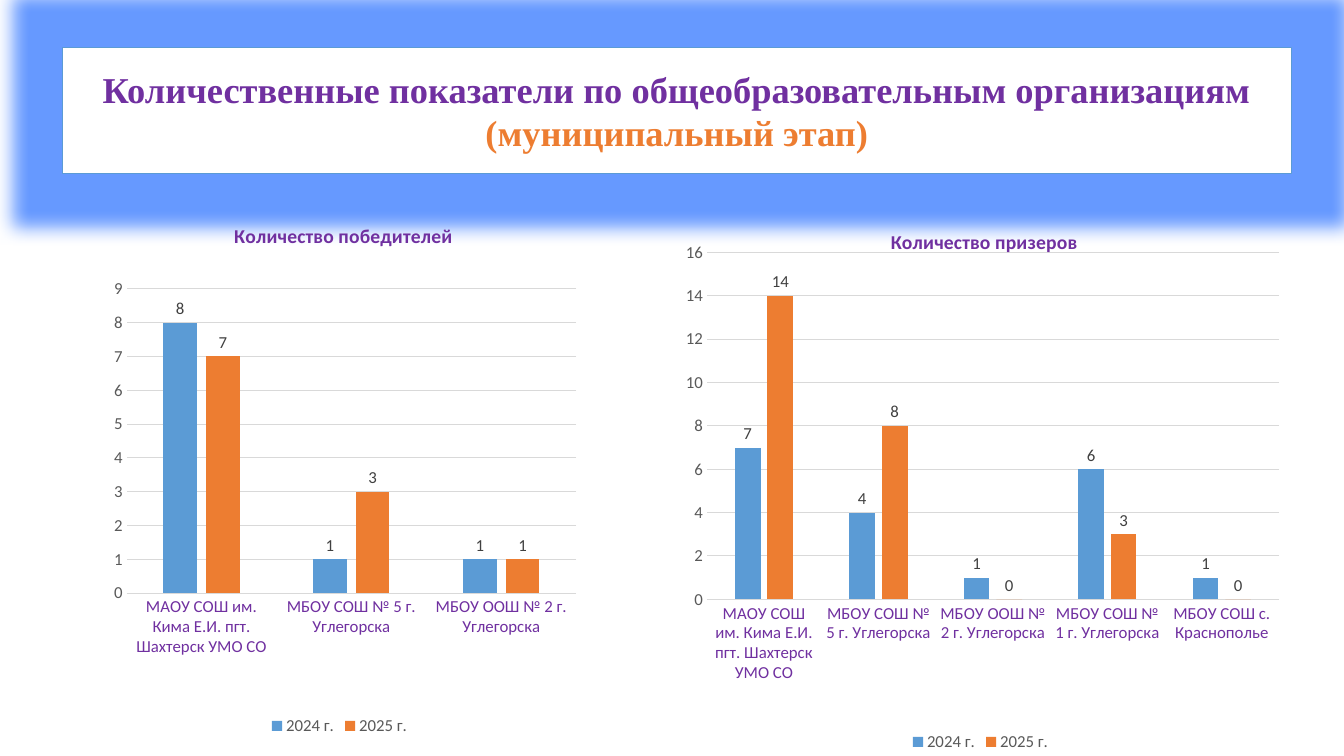
import pptx
import pptx.util
import pptx.dml.color
import pptx.chart.data
import pptx.enum.chart
import pptx.enum.shapes
import pptx.enum.text
import pptx.oxml
import pptx.oxml.ns

Inches = pptx.util.Inches
Pt = pptx.util.Pt
qn = pptx.oxml.ns.qn
enum = pptx.enum.chart

HUES = {
    "white": "FFFFFF", "blue": "5B9BD5", "orange": "ED7D31",
    "purple": "7030A0", "grid": "D9D9D9", "grey": "595959",
    "dark": "404040", "glow": "6699FF",
}
YEARS = ["2024 г.", "2025 г."]
SCHOOLS = [
    "МАОУ СОШ им. Кима Е.И. пгт. Шахтерск УМО СО",
    "МБОУ СОШ № 5 г. Углегорска",
    "МБОУ ООШ № 2 г. Углегорска",
    "МБОУ СОШ № 1 г. Углегорска",
    "МБОУ СОШ с. Краснополье",
]


def hue(name):
    return pptx.dml.color.RGBColor.from_string(HUES[name])


def style(font, size, name, face="Calibri", bold=False):
    font.size = Pt(size)
    font.name = face
    font.bold = bold
    font.color.rgb = hue(name)


def stroke(line, name, width):
    line.color.rgb = hue(name)
    line.width = Pt(width)


def glow(shape, size):
    uri = pptx.oxml.ns.nsdecls("a")
    shape.shadow.inherit = False
    effect = shape.element.spPr.find(qn("a:effectLst"))
    effect.append(pptx.oxml.parse_xml(
        f'<a:glow {uri} rad="{Inches(size)}">'
        f'<a:srgbClr val="{HUES["glow"]}"/></a:glow>'))


def place(node, index, inner=False, **spots):
    old = node.find(qn("c:layout"))
    if old is not None:
        node.remove(old)
    uri = pptx.oxml.ns.nsdecls("c")
    target = '<c:layoutTarget val="inner"/>' if inner else ""
    modes = "".join(f'<c:{key}Mode val="edge"/>' for key in "xy")
    sizes = "".join(f'<c:{key} val="{val}"/>' for key, val in spots.items())
    node.insert(index, pptx.oxml.parse_xml(
        f"<c:layout {uri}><c:manualLayout>{target}{modes}{sizes}"
        "</c:manualLayout></c:layout>"))


def banner(slide, box):
    shape = slide.shapes.add_shape(
        pptx.enum.shapes.MSO_SHAPE.RECTANGLE, *map(Inches, box))
    shape.fill.solid()
    shape.fill.fore_color.rgb = hue("white")
    stroke(shape.line, "blue", 1)
    glow(shape, 0.36)
    frame = shape.text_frame
    frame.word_wrap = True
    frame.vertical_anchor = pptx.enum.text.MSO_ANCHOR.MIDDLE
    para = frame.paragraphs[0]
    para.alignment = pptx.enum.text.PP_ALIGN.CENTER
    parts = [
        ("Количественные показатели по общеобразовательным организациям ",
         "purple"),
        ("(муниципальный этап)", "orange"),
    ]
    for text, name in parts:
        run = para.add_run()
        run.text = text
        style(run.font, 26, name, "Times New Roman", True)


def bars(slide, box, title, rows, top, step, head, plot):
    data = pptx.chart.data.CategoryChartData()
    data.categories = SCHOOLS[:len(rows[0])]
    for year, row in zip(YEARS, rows):
        data.add_series(year, row)
    chart = slide.shapes.add_chart(
        enum.XL_CHART_TYPE.COLUMN_CLUSTERED, *map(Inches, box), data).chart
    chart.font.size = Pt(10)
    chart.font.name = "Calibri"

    chart.has_title = True
    run = chart.chart_title.text_frame.paragraphs[0].add_run()
    run.text = title
    style(run.font, 14, "purple", bold=True)
    place(chart.element.find(".//" + qn("c:title")), 1, **head)
    place(chart.element.find(".//" + qn("c:plotArea")), 0, True, **plot)

    chart.has_legend = True
    chart.legend.position = enum.XL_LEGEND_POSITION.BOTTOM
    chart.legend.include_in_layout = False
    style(chart.legend.font, 12, "grey")

    cats, vals = chart.category_axis, chart.value_axis
    for axis, name in ((cats, "purple"), (vals, "grey")):
        axis.major_tick_mark = enum.XL_TICK_MARK.NONE
        axis.minor_tick_mark = enum.XL_TICK_MARK.NONE
        style(axis.tick_labels.font, 12, name)
    stroke(cats.format.line, "grid", 0.75)
    vals.format.line.fill.background()
    vals.has_major_gridlines = True
    stroke(vals.major_gridlines.format.line, "grid", 0.75)
    vals.minimum_scale = 0
    vals.maximum_scale = top
    vals.major_unit = step

    group = chart.plots[0]
    group.gap_width = 219
    group.overlap = -27
    group.vary_by_categories = False
    for series, name in zip(group.series, ("blue", "orange")):
        series.format.fill.solid()
        series.format.fill.fore_color.rgb = hue(name)
        labels = series.data_labels
        labels.show_value = True
        labels.position = enum.XL_LABEL_POSITION.OUTSIDE_END
        style(labels.font, 12, "dark")


def main():
    deck = pptx.Presentation()
    deck.slide_width = Inches(13.33)
    deck.slide_height = Inches(7.5)
    slide = deck.slides.add_slide(deck.slide_layouts[6])
    banner(slide, (0.62, 0.47, 12.19, 1.25))
    bars(slide, (1.02, 1.95, 4.7, 5.39), "Количество победителей",
         [(8, 1, 1), (7, 3, 1)], 9, 1,
         dict(x=0.27, y=0.04), dict(x=0.05, y=0.17, w=0.95, h=0.56))
    bars(slide, (6.64, 1.95, 6.17, 5.55), "Количество призеров",
         [(7, 4, 1, 6, 1), (14, 8, 0, 3, 0)], 16, 2,
         dict(x=0.35, y=0.05), dict(x=0.06, y=0.1, w=0.92, h=0.62))
    deck.save("out.pptx")


if __name__ == "__main__":
    main()
